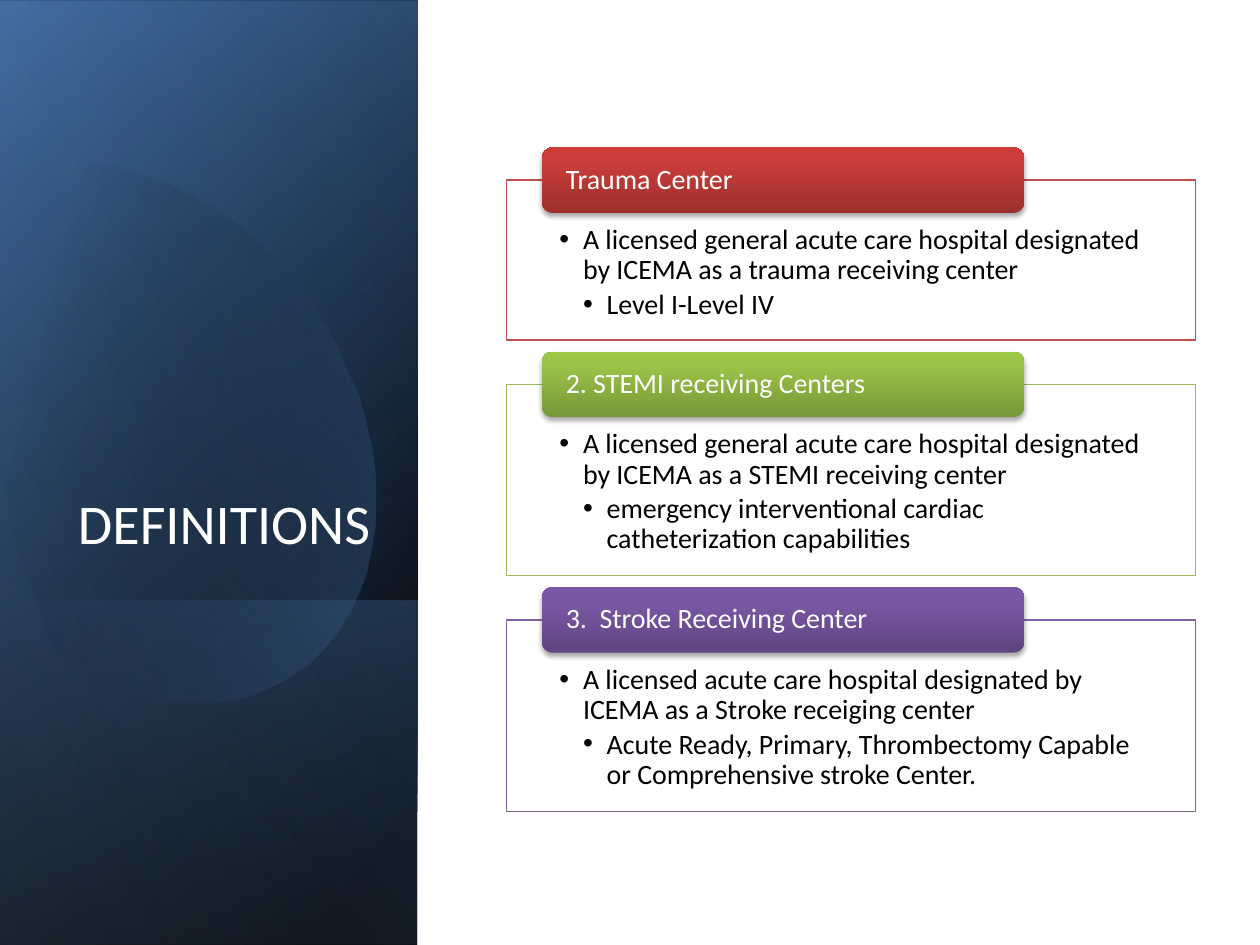
from lxml import etree
from pptx import Presentation
from pptx.dml.color import RGBColor
from pptx.enum.shapes import MSO_SHAPE as SHAPE
from pptx.enum.text import MSO_ANCHOR as ANCHOR, PP_ALIGN as ALIGN
from pptx.oxml.ns import qn
from pptx.util import Pt

FONT = "Calibri"
BLACK, WHITE = RGBColor(0, 0, 0), RGBColor(255, 255, 255)
NAVY, BLUE, PALE_BLUE = (RGBColor.from_string(c) for c in ("376092", "4F81BD", "95B3D7"))
RED, GREEN, PURPLE = (RGBColor.from_string(c) for c in ("C0504D", "9BBB59", "8064A2"))
RED_SHADES, GREEN_SHADES, PURPLE_SHADES = (
    [RGBColor.from_string(c) for c in shades]
    for shades in (("9C2F2D", "CB3E3A", "CE3B37"),
                   ("779737", "9BC348", "9DC746"),
                   ("5F4480", "7B58A6", "7C57A8"))
)

TITLE = "DEFINITIONS"
# heading, first-level bullet, second-level bullet, panel height, outline, heading shades
DEFINITIONS = [
    ("Trauma Center",
     "A licensed general acute care hospital designated by ICEMA as a trauma receiving center",
     "Level I-Level IV", 91.44, RED, RED_SHADES),
    ("2. STEMI receiving Centers",
     "A licensed general acute care hospital designated by ICEMA as a STEMI receiving center",
     "emergency interventional cardiac catheterization capabilities",
     109.44, GREEN, GREEN_SHADES),
    ("3.  Stroke Receiving Center",
     "A licensed acute care hospital designated by ICEMA as a Stroke receiging center",
     "Acute Ready, Primary, Thrombectomy Capable or Comprehensive stroke Center.",
     109.44, PURPLE, PURPLE_SHADES),
]

# top, height, gradient stops (position, colour, opacity), angle
SIDEBAR_WIDTH = 238.5
SIDEBAR_BASE = [
    (0, 540, [(8, BLACK, 100), (100, NAVY, 100)], 50),
    (1, 540, [(0, BLACK, 0), (99, BLUE, 46)], 30),
    (343, 197, [(2, BLUE, 29), (100, BLACK, 30)], 130),
]
SIDEBAR_GLAZE = (0, 540, [(0, BLACK, 0), (99, PALE_BLUE, 11)], 120)

# Leaf outline in points: a start, then line ends (1 point) or curves (3 points)
LEAF_START = (69, 82)
LEAF_SEGMENTS = [
    [(123, 88), (176, 138), (197, 209)],
    [(221, 297), (189, 382), (123, 401)],
    [(82, 413), (38, 396), (5, 360)],
    [(-2, 351)], [(-18, 120)], [(-11, 111)],
    [(1, 99), (16, 90), (32, 85)],
    [(45, 81), (57, 81), (69, 82)],
]
LEAF_STOPS = [(29, BLACK, 0), (100, BLUE, 43)]

PANEL_LEFT, PANEL_TOP, PANEL_WIDTH, PANEL_GAP = 289.44, 102.96, 393.84, 25.2
HEADING_INDENT, HEADING_RISE, HEADING_WIDTH, HEADING_HEIGHT = 20.16, 18.72, 275.76, 37.44
BULLET_INDENT = 13.5


def add_color(parent, color, opacity):
    element = etree.SubElement(parent, qn("a:srgbClr"), val=str(color))
    if opacity < 100:
        etree.SubElement(element, qn("a:alpha"), val=str(opacity * 1000))


def set_gradient(shape, stops, angle):
    """Fill with a linear gradient whose angle runs clockwise and turns with the shape."""
    shape.fill.background()
    gradient = etree.Element(qn("a:gradFill"), rotWithShape="1")
    stop_list = etree.SubElement(gradient, qn("a:gsLst"))
    for position, color, opacity in stops:
        stop = etree.SubElement(stop_list, qn("a:gs"), pos=str(position * 1000))
        add_color(stop, color, opacity)
    etree.SubElement(gradient, qn("a:lin"), ang=str(angle * 60000), scaled="0")
    properties = shape._element.spPr
    properties.replace(properties.find(qn("a:noFill")), gradient)


def add_box(slide, kind, left, top, width, height):
    shape = slide.shapes.add_shape(kind, Pt(left), Pt(top), Pt(width), Pt(height))
    shape.shadow.inherit = False
    shape.line.fill.background()
    return shape


def add_sidebar_layer(slide, top, height, stops, angle):
    """Add a rectangle turned a quarter and mirrored, so its gradient turns too."""
    left = (SIDEBAR_WIDTH - height) / 2
    turned_top = top + (height - SIDEBAR_WIDTH) / 2
    shape = add_box(slide, SHAPE.RECTANGLE, left, turned_top, height, SIDEBAR_WIDTH)
    shape.rotation = 90
    shape._element.spPr.find(qn("a:xfrm")).set("flipH", "1")
    set_gradient(shape, stops, angle)


def curve_points(start, first, second, end, steps=16):
    """Sample a cubic Bezier curve."""
    for step in range(1, steps + 1):
        t = step / steps
        weights = ((1 - t) ** 3, 3 * t * (1 - t) ** 2, 3 * t * t * (1 - t), t ** 3)
        yield tuple(sum(w * point[axis] for w, point in zip(weights, (start, first, second, end)))
                    for axis in (0, 1))


def add_leaf(slide):
    points = [LEAF_START]
    for segment in LEAF_SEGMENTS:
        points += curve_points(points[-1], *segment) if len(segment) == 3 else segment
    builder = slide.shapes.build_freeform(*LEAF_START, scale=Pt(1))
    builder.add_line_segments(points[1:], close=True)
    leaf = builder.convert_to_shape()
    leaf.shadow.inherit = False
    leaf.line.fill.background()
    leaf.rotation = 343.9
    set_gradient(leaf, LEAF_STOPS, 30)


def set_frame(shape, anchor, margins):
    frame = shape.text_frame
    settings = dict(zip(("margin_left", "margin_top", "margin_right", "margin_bottom"),
                        map(Pt, margins)), word_wrap=True, vertical_anchor=anchor)
    for name, value in settings.items():
        setattr(frame, name, value)
    return frame


def write(paragraph, text, color, size=16, **layout):
    paragraph.text = text
    for name, value in layout.items():
        setattr(paragraph, name, value)
    font = paragraph.font
    for name, value in {"name": FONT, "size": Pt(size)}.items():
        setattr(font, name, value)
    font.color.rgb = color


def add_bullet(paragraph, level):
    properties = paragraph._p.get_or_add_pPr()
    properties.set("marL", str(Pt(BULLET_INDENT * level)))
    properties.set("indent", str(-Pt(BULLET_INDENT)))
    etree.SubElement(properties, qn("a:buFont"), typeface="Arial")
    etree.SubElement(properties, qn("a:buChar"), char="•")


def add_panel(slide, top, height, outline, bullets):
    panel = add_box(slide, SHAPE.RECTANGLE, PANEL_LEFT, top, PANEL_WIDTH, height)
    panel.fill.solid()
    panel.fill.fore_color.rgb = WHITE
    panel.line.color.rgb = outline
    panel.line.width = Pt(0.75)
    frame = set_frame(panel, ANCHOR.TOP, (30.24, 25.92, 30.24, 8.64))
    for level, text in enumerate(bullets, start=1):
        paragraph = frame.paragraphs[0] if level == 1 else frame.add_paragraph()
        add_bullet(paragraph, level)
        write(paragraph, text, BLACK, alignment=ALIGN.LEFT,
              line_spacing=0.9, space_after=Pt(2.4))


def add_heading(slide, panel_top, text, shades):
    heading = add_box(slide, SHAPE.ROUNDED_RECTANGLE, PANEL_LEFT + HEADING_INDENT,
                      panel_top - HEADING_RISE, HEADING_WIDTH, HEADING_HEIGHT)
    set_gradient(heading, [(p, c, 100) for p, c in zip((0, 80, 100), shades)], 270)
    effects = heading._element.spPr.find(qn("a:effectLst"))
    shadow = etree.SubElement(effects, qn("a:outerShdw"), blurRad=str(Pt(3.1)),
                              dist=str(Pt(1.8)), dir="5400000", rotWithShape="0")
    add_color(shadow, BLACK, 35)
    frame = set_frame(heading, ANCHOR.MIDDLE, (11.9, 0, 11.9, 0))
    write(frame.paragraphs[0], text, WHITE, alignment=ALIGN.LEFT, line_spacing=0.9)


def main():
    presentation = Presentation()
    presentation.slide_width, presentation.slide_height = Pt(720), Pt(540)
    slide = presentation.slides.add_slide(presentation.slide_layouts[6])

    for layer in SIDEBAR_BASE:
        add_sidebar_layer(slide, *layer)
    add_leaf(slide)
    add_sidebar_layer(slide, *SIDEBAR_GLAZE)

    title = slide.shapes.add_textbox(Pt(34.56), Pt(132.48), Pt(184.32), Pt(188.64))
    frame = set_frame(title, ANCHOR.BOTTOM, (7.2, 3.6, 7.2, 3.6))
    write(frame.paragraphs[0], TITLE, WHITE, size=32, alignment=ALIGN.RIGHT)

    top = PANEL_TOP
    for heading, detail, subdetail, height, outline, shades in DEFINITIONS:
        add_panel(slide, top, height, outline, (detail, subdetail))
        add_heading(slide, top, heading, shades)
        top += height + PANEL_GAP

    presentation.save("out.pptx")


if __name__ == "__main__":
    main()
